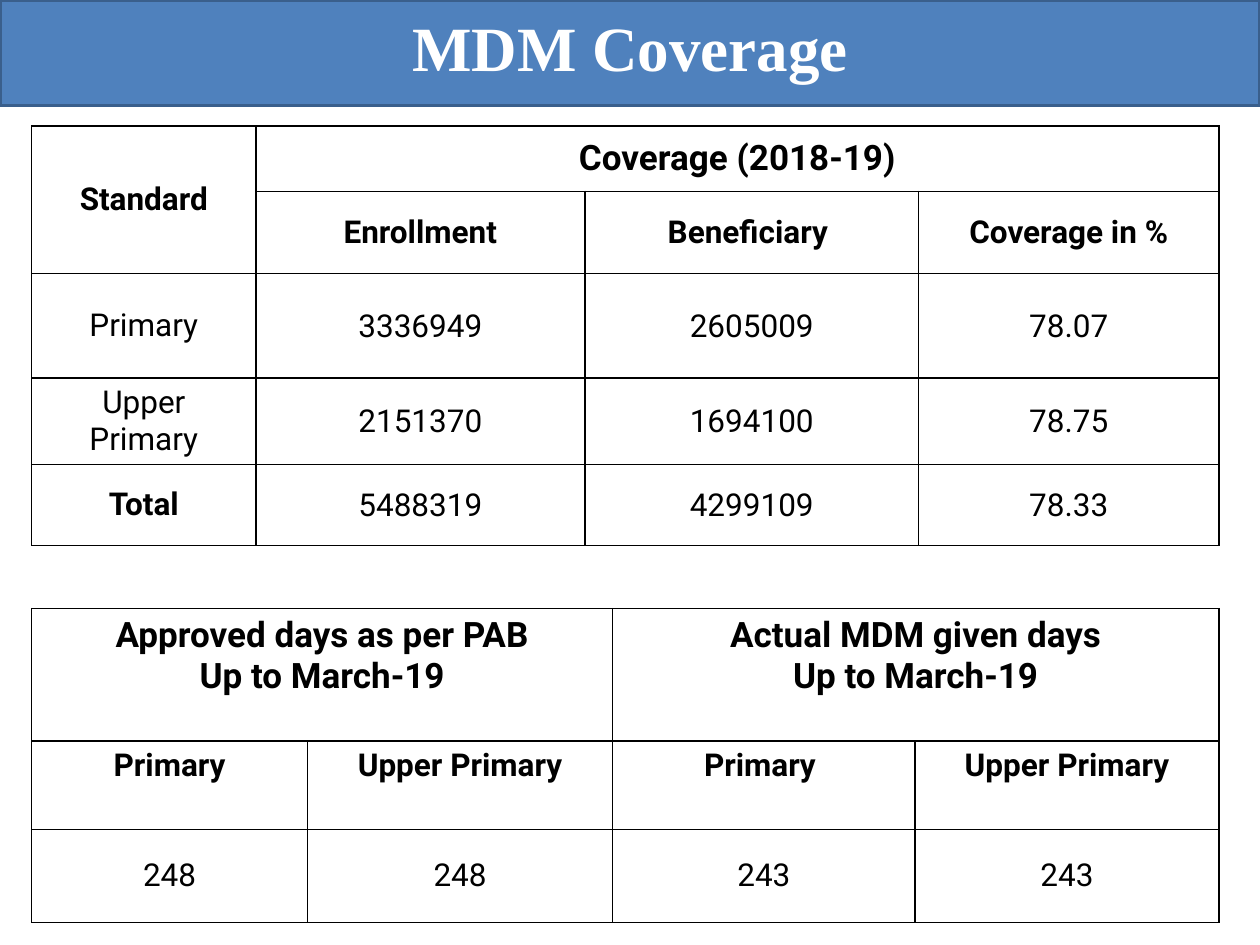
from lxml.etree import SubElement
from pptx import Presentation
from pptx.dml.color import RGBColor
from pptx.enum.text import MSO_ANCHOR, MSO_AUTO_SIZE, PP_ALIGN
from pptx.oxml.ns import qn
from pptx.util import Cm, Pt

BLACK = RGBColor(0x00, 0x00, 0x00)
WHITE = RGBColor(0xFF, 0xFF, 0xFF)
BANNER_BLUE = RGBColor(0x4F, 0x81, 0xBD)
BANNER_EDGE = RGBColor(0x3A, 0x5F, 0x8C)

COVERAGE_ROWS = [
    ["Standard", "Coverage (2018-19)", "", ""],
    ["", "Enrollment", "Beneficiary ", "Coverage in %"],
    ["Primary", "3336949", "2605009", "78.07"],
    ["Upper Primary", "2151370", "1694100", "78.75"],
    ["Total", "5488319", "4299109", "78.33"],
]
DAYS_ROWS = [
    ["Approved days as per PAB\nUp to March-19", "", "Actual MDM given days\nUp to March-19", ""],
    ["Primary", "Upper Primary", "Primary ", "Upper Primary"],
    ["248", "248", "243", "243"],
]


def format_text(frame, font_name, size, color, bold):
    """Centre every paragraph of a text frame and format its runs."""
    for paragraph in frame.paragraphs:
        paragraph.alignment = PP_ALIGN.CENTER
        for run in paragraph.runs:
            run.font.name = font_name
            run.font.size = Pt(size)
            run.font.bold = bold
            run.font.color.rgb = color


def set_borders(cell):
    """Draw a thin black line on all four sides of a cell."""
    properties = cell._tc.get_or_add_tcPr()
    for side in ("a:lnL", "a:lnR", "a:lnT", "a:lnB"):
        border = SubElement(properties, qn(side), w=str(Pt(1)))
        fill = SubElement(border, qn("a:solidFill"))
        SubElement(fill, qn("a:srgbClr"), val=str(BLACK))


def add_grid(slide, top, widths, heights, rows, merges):
    """Add a white bordered table with its text and merged cells."""
    grid = slide.shapes.add_table(
        len(rows), len(widths), Cm(0.64), Cm(top), Cm(sum(widths)), Cm(sum(heights))
    ).table
    for column, width in zip(grid.columns, widths):
        column.width = Cm(width)
    for row, height in zip(grid.rows, heights):
        row.height = Cm(height)
    for first, last in merges:
        grid.cell(*first).merge(grid.cell(*last))
    for r, texts in enumerate(rows):
        for c, text in enumerate(texts):
            cell = grid.cell(r, c)
            set_borders(cell)
            cell.fill.solid()
            cell.fill.fore_color.rgb = WHITE
            cell.vertical_anchor = MSO_ANCHOR.MIDDLE
            cell.text_frame.text = text
            is_group_heading = cell.is_merge_origin and cell.span_width > 1
            is_bold = r < 2 or text == "Total"
            format_text(cell.text_frame, "Roboto", 20 if is_group_heading else 18, BLACK, is_bold)
    return grid


def add_banner(slide, heading):
    """Turn the title placeholder into a full-width banner."""
    banner = slide.shapes.title
    banner.left, banner.top, banner.width, banner.height = Cm(0), Cm(0), Cm(25.4), Cm(2.13)
    banner.fill.solid()
    banner.fill.fore_color.rgb = BANNER_BLUE
    banner.line.color.rgb = BANNER_EDGE
    banner.line.width = Pt(2)
    frame = banner.text_frame
    frame.text = heading
    frame.auto_size = MSO_AUTO_SIZE.NONE
    frame.vertical_anchor = MSO_ANCHOR.MIDDLE
    frame.margin_top, frame.margin_bottom = Cm(0), Cm(0.25)
    format_text(frame, "Times New Roman", 36, WHITE, True)


def add_coverage(slide):
    """Add the coverage table with tight margins around its figures."""
    coverage = add_grid(
        slide, 2.54, [4.52, 6.63, 6.73, 6.05], [1.32, 1.65, 2.11, 1.5, 1.63],
        COVERAGE_ROWS, [((0, 0), (1, 0)), ((0, 1), (0, 3))],
    )
    for r in range(2, len(COVERAGE_ROWS)):
        for c in range(1, 4):
            figure = coverage.cell(r, c)
            figure.margin_left = figure.margin_right = figure.margin_top = Cm(0.03)
            figure.margin_bottom = Cm(0)


def add_days(slide):
    """Add the table of approved and actual days with headings at the top."""
    days = add_grid(
        slide, 12.27, [5.56, 6.15, 6.1, 6.12], [2.67, 1.78, 1.88],
        DAYS_ROWS, [((0, 0), (0, 1)), ((0, 2), (0, 3))],
    )
    for r in range(2):
        for c in range(4):
            days.cell(r, c).vertical_anchor = MSO_ANCHOR.TOP


def main():
    """Build the slide and save it."""
    deck = Presentation()
    deck.slide_width, deck.slide_height = Cm(25.4), Cm(19.05)
    slide = deck.slides.add_slide(deck.slide_layouts[5])
    add_banner(slide, "MDM Coverage")
    add_coverage(slide)
    add_days(slide)
    deck.save("out.pptx")


if __name__ == "__main__":
    main()
